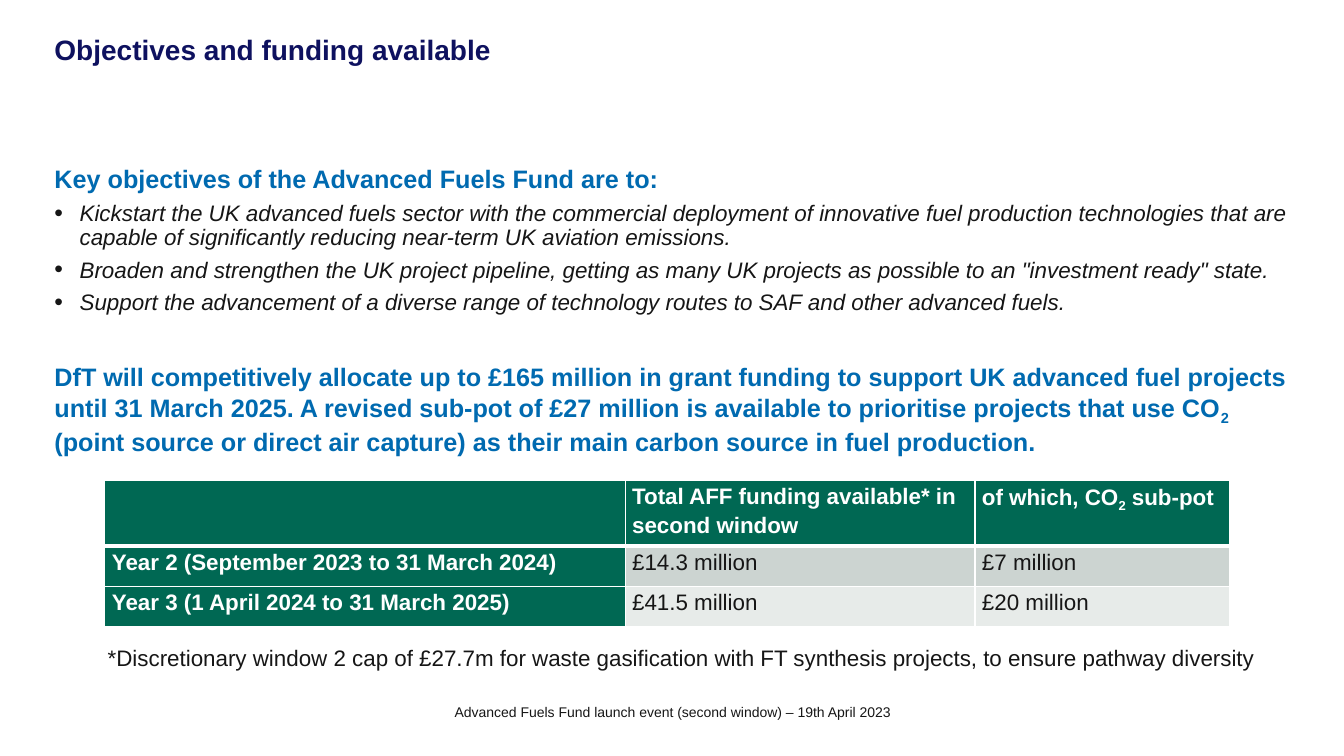
from lxml.etree import SubElement as Sub
from pptx import Presentation
from pptx.dml.color import RGBColor as RGB
from pptx.enum.text import PP_ALIGN as Align
from pptx.oxml.ns import qn
from pptx.util import Inches, Pt

HEX = {"navy": "0E115F", "blue": "006AB0", "ink": "161616", "white": "FFFFFF",
       "green": "006853", "band": "CCD4D1", "pale": "E7EBE9"}

TITLE = {"size": Pt(20), "bold": True, "color": "navy"}
HEAD = {"size": Pt(18), "bold": True, "color": "blue"}
ITEM = {"size": Pt(16), "italic": True, "color": "ink"}
PLAIN = {"size": Pt(16), "color": "ink"}
LABEL = {"size": Pt(16), "bold": True, "color": "white"}
SMALL = {"size": Pt(10), "color": "ink"}

GOALS = [
    "Kickstart the UK advanced fuels sector with the commercial deployment of "
    "innovative fuel production technologies that are capable of significantly "
    "reducing near-term UK aviation emissions.",
    "Broaden and strengthen the UK project pipeline, getting as many UK projects "
    "as possible to an \"investment ready\" state.",
    "Support the advancement of a diverse range of technology routes to SAF and "
    "other advanced fuels.",
]
GRANT = ("DfT will competitively allocate up to £165 million in grant funding to "
         "support UK advanced fuel projects until 31 March 2025. A revised sub-pot "
         "of £27 million is available to prioritise projects that use CO|2| (point "
         "source or direct air capture) as their main carbon source in fuel "
         "production.")
FUNDS = [
    ["", "Total AFF funding available* in second window", "of which, CO|2| sub-pot"],
    ["Year 2 (September 2023 to 31 March 2024)", "£14.3 million", "£7 million"],
    ["Year 3 (1 April 2024 to 31 March 2025)", "£41.5 million", "£20 million"],
]


def write(para, text, look, **gaps):
    """Fill a paragraph; text between bars becomes subscript."""
    for name, value in gaps.items():
        setattr(para, name, value)
    for i, part in enumerate(text.split("|")):
        if not part:
            continue
        run = para.add_run()
        run.text = part
        run.font.name = "Arial"
        for name, value in look.items():
            if name == "color":
                run.font.color.rgb = RGB.from_string(HEX[value])
            else:
                setattr(run.font, name, value)
        if i % 2:
            run._r.get_or_add_rPr().set("baseline", "-25000")


def add_box(slide, box, inset=None):
    frame = slide.shapes.add_textbox(*map(Inches, box)).text_frame
    frame.word_wrap = True
    if inset is not None:
        for side in ("left", "top", "right", "bottom"):
            setattr(frame, f"margin_{side}", Inches(inset))
    return frame


def add_dot(para):
    """Give a paragraph a hanging bullet."""
    props = para._p.get_or_add_pPr()
    props.set("marL", str(Inches(0.25)))
    props.set("indent", str(Inches(-0.25)))
    Sub(props, qn("a:buSzPct"), val="110000")
    Sub(props, qn("a:buFont"), typeface="Arial")
    Sub(props, qn("a:buChar"), char="•")


def add_line(slide, box, text, look, inset=None, **gaps):
    """Place a box that holds one paragraph."""
    write(add_box(slide, box, inset).paragraphs[0], text, look, **gaps)


def add_body(slide, box):
    frame = add_box(slide, box, 0)
    write(frame.paragraphs[0], "Key objectives of the Advanced Fuels Fund are to:",
          HEAD, space_after=Pt(6))
    for goal in GOALS:
        para = frame.add_paragraph()
        add_dot(para)
        write(para, goal, ITEM, line_spacing=0.9, space_after=Pt(6))
    write(frame.add_paragraph(), GRANT, HEAD, space_before=Pt(27),
          space_after=Pt(6))


def add_rules(cell, widths):
    """Draw white cell borders with the given widths in points."""
    props = cell._tc.get_or_add_tcPr()
    for side, width in zip("LRTB", widths):
        line = Sub(props, qn(f"a:ln{side}"), w=str(Pt(width)))
        Sub(Sub(line, qn("a:solidFill")), qn("a:srgbClr"), val=HEX["white"])


def add_funds(slide, box):
    table = slide.shapes.add_table(3, 3, *map(Inches, box)).table
    for col, width in zip(table.columns, (5.16, 3.47, 2.53)):
        col.width = Inches(width)
    for row, height in zip(table.rows, (0.65, 0.4, 0.4)):
        row.height = Inches(height)
    for r, texts in enumerate(FUNDS):
        for c, text in enumerate(texts):
            cell = table.cell(r, c)
            cell.margin_left = cell.margin_right = Inches(0.07)
            cell.margin_top = cell.margin_bottom = 0
            add_rules(cell, (1, 1, 3 if r == 1 else 1, 3 if r == 0 else 1))
            head = r == 0 or c == 0
            fill = "green" if head else ("band", "pale")[r - 1]
            cell.fill.solid()
            cell.fill.fore_color.rgb = RGB.from_string(HEX[fill])
            write(cell.text_frame.paragraphs[0], text, LABEL if head else
                  {**PLAIN, "bold": False}, line_spacing=1.15, space_after=Pt(8))


def main():
    deck = Presentation()
    deck.slide_width, deck.slide_height = Inches(13.33), Inches(7.5)
    slide = deck.slides.add_slide(deck.slide_layouts[6])
    add_line(slide, (0.54, 0.36, 12.27, 1.37), "Objectives and funding available",
             TITLE, 0, line_spacing=0.9)
    add_body(slide, (0.54, 1.62, 12.28, 4.25))
    add_line(slide, (3.88, 6.93, 5.58, 0.2),
             "Advanced Fuels Fund launch event (second window) – 19th April 2023",
             SMALL, alignment=Align.CENTER)
    add_funds(slide, (1.04, 4.77, 11.16, 1.45))
    add_line(slide, (0.97, 6.34, 11.67, 0.37),
             "*Discretionary window 2 cap of £27.7m for waste gasification with FT "
             "synthesis projects, to ensure pathway diversity", PLAIN)
    deck.save("out.pptx")


if __name__ == "__main__":
    main()
